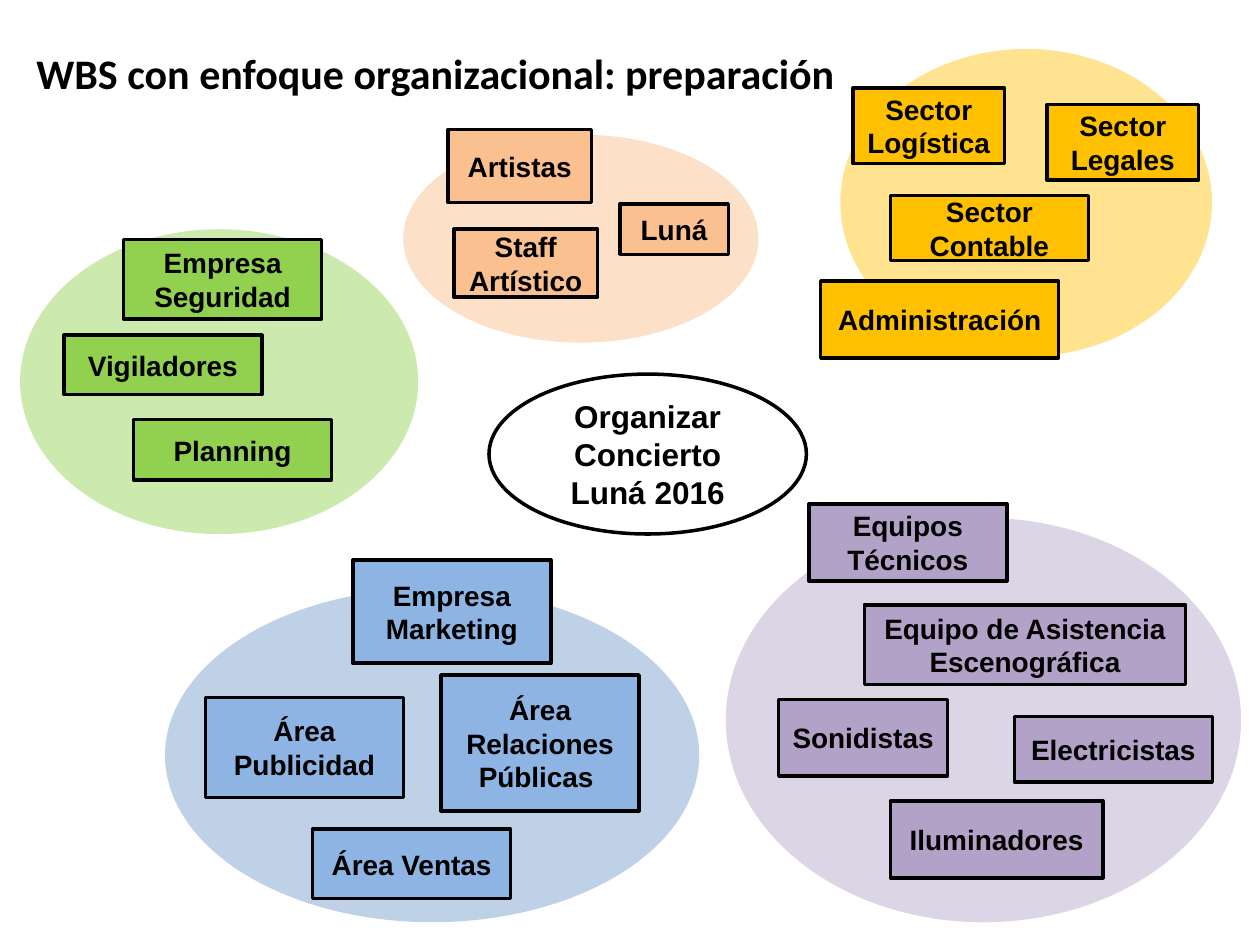
import lxml.etree
import pptx
import pptx.dml.color
import pptx.enum.shapes
import pptx.enum.text
import pptx.oxml.ns
import pptx.util

Pt = pptx.util.Pt
SHAPES = pptx.enum.shapes.MSO_SHAPE
BLACK = "000000"

# Content: boxes are left, top, width, height in points
TITLE = "WBS con enfoque organizacional: preparación"
TITLE_BOX = (13.7, 23.8, 483.8, 36)
CENTER = "Organizar Concierto Luná 2016"
CENTER_BOX = (279.4, 213.8, 181.4, 91.4)
WIDE = 113.2  # usual box width

GROUPS = [
    {"area": (230.4, 77, 203, 118.8), "tint": "FAC090", "opacity": 49, "color": "FAC090",
     "boxes": [("Artistas", 256, 74, 82, 41.8),
               ("Staff Artístico", 259.4, 131, 82, 38.9),
               ("Luná", 354.2, 116.6, 62, 28.8)]},
    {"area": (414.7, 295.9, 294.5, 231.1), "tint": "B3A2C7", "opacity": 45, "color": "B3A2C7",
     "boxes": [("Equipos Técnicos", 462.2, 288, WIDE, 43.9),
               ("Equipo de Asistencia Escenográfica", 493.9, 345.6, 183.6, 45.6),
               ("Sonidistas", 445, 399.6, 96.5, 43.9),
               ("Electricistas", 579.6, 409.4, WIDE, 37.4),
               ("Iluminadores", 508.8, 457.7, 121.4, 43.9)]},
    {"area": (94.3, 336.2, 305.3, 190.8), "tint": "4F81BD", "opacity": 36, "color": "8EB4E3",
     "boxes": [("Empresa Marketing", 201.6, 320, WIDE, 59),
               ("Área Publicidad", 117.4, 398.5, WIDE, 57.3),
               ("Área Relaciones Públicas ", 252, 385.7, WIDE, 77.8),
               ("Área Ventas", 178.6, 473.8, WIDE, 39.6)]},
    {"area": (11.5, 131, 227.5, 174.2), "tint": "92D050", "opacity": 46, "color": "92D050",
     "boxes": [("Empresa Seguridad", 70.6, 136.8, WIDE, 45.4),
               ("Vigiladores", 36.5, 191.5, WIDE, 34),
               ("Planning", 76.3, 239.8, WIDE, 34.6)]},
    {"area": (480.2, 28, 212.4, 175.7), "tint": "FFC000", "opacity": 43, "color": "FFC000",
     "boxes": [("Sector Logística", 487.4, 50.4, 86.6, 43.2),
               ("Sector Legales", 598.3, 59.8, 86.6, 43.2),
               ("Sector Contable", 508.8, 111.6, WIDE, 37.4),
               ("Administración", 469, 160.6, 136, 43.9)]},
]


def rgb(value):
    return pptx.dml.color.RGBColor.from_string(value)


def write(shape, text, size, font="Arial"):
    shape.text_frame.word_wrap = True
    paragraph = shape.text_frame.paragraphs[0]
    run = paragraph.add_run()
    run.text = text
    run.font.name = font
    run.font.size = Pt(size)
    run.font.bold = True
    run.font.color.rgb = rgb(BLACK)
    return paragraph


def add_shape(slide, kind, box, fill=None):
    shape = slide.shapes.add_shape(kind, *map(Pt, box))
    shape.shadow.inherit = False
    if fill:
        shape.fill.solid()
        shape.fill.fore_color.rgb = rgb(fill)
    else:
        shape.fill.background()
    return shape


def add_area(slide, box, tint, opacity):
    shape = add_shape(slide, SHAPES.OVAL, box, tint)
    shape.line.fill.background()
    color = next(shape.element.spPr.iter(pptx.oxml.ns.qn("a:srgbClr")))
    alpha = lxml.etree.SubElement(color, pptx.oxml.ns.qn("a:alpha"))
    alpha.set("val", str(opacity * 1000))


def add_label(slide, kind, box, text, size, fill=None):
    shape = add_shape(slide, kind, box, fill)
    shape.line.color.rgb = rgb(BLACK)
    shape.line.width = Pt(2)
    shape.text_frame.vertical_anchor = pptx.enum.text.MSO_ANCHOR.MIDDLE
    write(shape, text, size).alignment = pptx.enum.text.PP_ALIGN.CENTER


def main():
    presentation = pptx.Presentation()
    presentation.slide_width, presentation.slide_height = Pt(720), Pt(540)
    slide = presentation.slides.add_slide(presentation.slide_layouts[6])

    # Tinted areas lie behind every label
    for group in GROUPS:
        add_area(slide, group["area"], group["tint"], group["opacity"])
    for group in GROUPS:
        for text, *box in group["boxes"]:
            add_label(slide, SHAPES.RECTANGLE, box, text, 16, group["color"])

    # Title and central goal
    write(slide.shapes.add_textbox(*map(Pt, TITLE_BOX)), TITLE, 24, "Calibri")
    add_label(slide, SHAPES.OVAL, CENTER_BOX, CENTER, 18)

    presentation.save("out.pptx")


if __name__ == "__main__":
    main()
